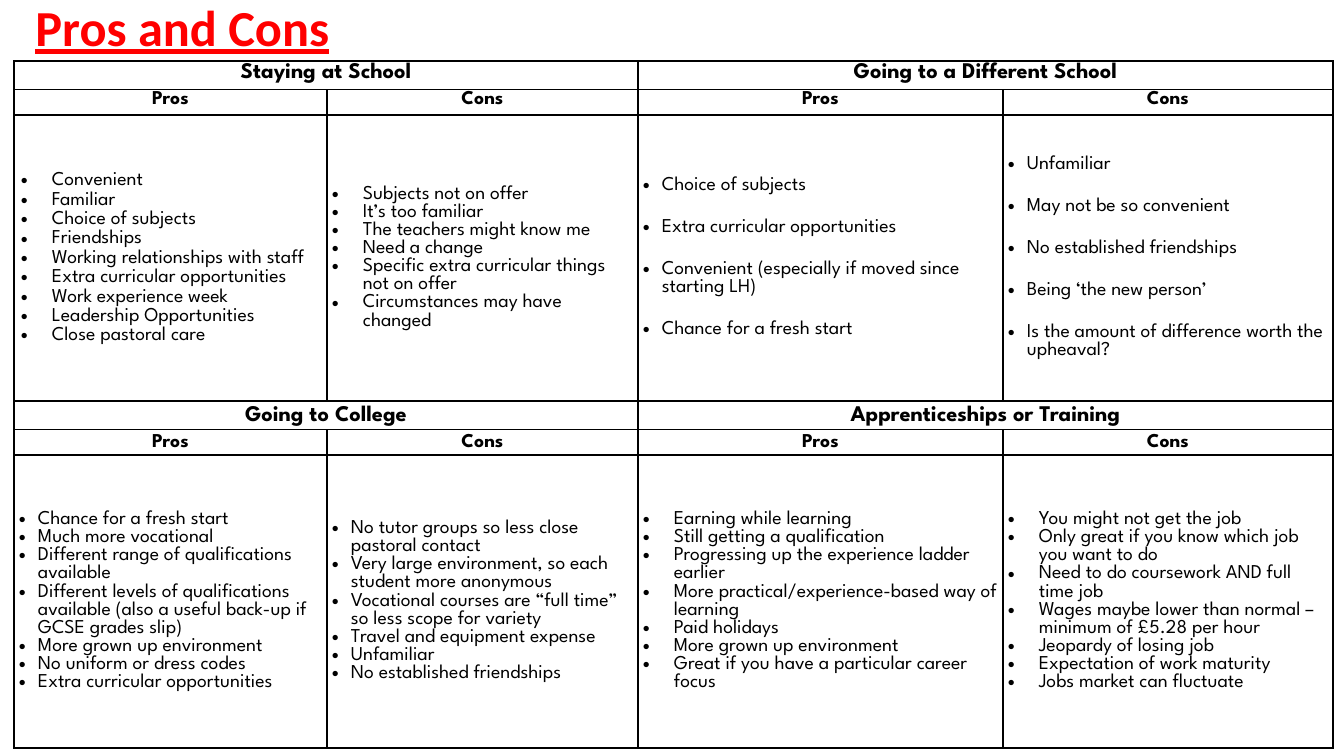
"""Build the Pros and Cons slide comparing four routes after school."""
from lxml import etree
from pptx import Presentation
from pptx import util as u
from pptx.dml import color
from pptx.enum import text
from pptx.oxml import ns

EMU_PER_PX = 914400 / 100.8
FONT = "League Spartan"
COLUMN_WIDTHS = [313, 311, 365, 330]
ROW_HEIGHTS = [28, 25, 286, 28, 25, 293]
ROUTES_PER_ROW = 2
ROWS_PER_ROUTE = 3
HEADING = dict(bold=True, align=text.PP_ALIGN.CENTER, spacing=1.07, before=6, after=6)
WIDE = dict(indent=31, hang=31)
NARROW = dict(indent=19, hang=19)
SPACED = dict(NARROW, gap=17)

ROUTES = [
    ("Staying at School",
     (["Convenient", "Familiar", "Choice of subjects", "Friendships",
       "Working relationships with staff", "Extra curricular opportunities",
       "Work experience week", "Leadership Opportunities", "Close pastoral care"],
      dict(indent=33, hang=31, spacing=1.07, tail=8)),
     (["Subjects not on offer", "It’s too familiar", "The teachers might know me",
       "Need a change", "Specific extra curricular things not on offer",
       "Circumstances may have changed"], WIDE)),
    ("Going to a Different School",
     (["Choice of subjects", "Extra curricular opportunities",
       "Convenient (especially if moved since starting LH)",
       "Chance for a fresh start"], SPACED),
     (["Unfamiliar", "May not be so convenient", "No established friendships",
       "Being ‘the new person’",
       "Is the amount of difference worth the upheaval?"], SPACED)),
    ("Going to College",
     (["Chance for a fresh start", "Much more vocational",
       "Different range of qualifications available",
       "Different levels of qualifications available "
       "(also a useful back-up if GCSE grades slip)",
       "More grown up environment", "No uniform or dress codes",
       "Extra curricular opportunities"], NARROW),
     (["No tutor groups so less close pastoral contact",
       "Very large environment, so each student more anonymous",
       "Vocational courses are “full time” so less scope for variety",
       "Travel and equipment expense", "Unfamiliar",
       "No established friendships"], NARROW)),
    ("Apprenticeships or Training",
     (["Earning while learning", "Still getting a qualification",
       "Progressing up the experience ladder earlier",
       "More practical/experience-based way of learning", "Paid holidays",
       "More grown up environment",
       "Great if you have a particular career focus"], WIDE),
     (["You might not get the job",
       "Only great if you know which job you want to do",
       "Need to do coursework AND full time job",
       "Wages maybe lower than normal – minimum of £5.28 per hour",
       "Jeopardy of losing job", "Expectation of work maturity",
       "Jobs market can fluctuate"], WIDE)),
]


def px(length):
    """Turn whole pixels into EMU."""
    return u.Emu(round(length * EMU_PER_PX))


def rgb(hex_value):
    """Turn a hex string into a colour."""
    return color.RGBColor.from_string(hex_value)


def write(paragraph, words, size=14, font=FONT, ink="000000", bold=False,
          underline=False, align=text.PP_ALIGN.LEFT, spacing=1.0, before=0, after=0):
    """Put formatted words into a paragraph."""
    paragraph.alignment = align
    paragraph.line_spacing = spacing
    paragraph.space_before = u.Pt(before)
    paragraph.space_after = u.Pt(after)
    run = paragraph.add_run()
    run.text = words
    run.font.size = u.Pt(size)
    run.font.name = font
    run.font.bold = bold
    run.font.underline = underline
    run.font.color.rgb = rgb(ink)


def add_bullet(paragraph, indent, hang):
    """Give a paragraph a round bullet with a hanging indent."""
    properties = paragraph._p.get_or_add_pPr()
    properties.set("marL", str(px(indent)))
    properties.set("indent", str(-px(hang)))
    etree.SubElement(properties, ns.qn("a:buFont"), typeface="Arial")
    etree.SubElement(properties, ns.qn("a:buChar"), char="•")


def write_points(cell, points, indent, hang, spacing=1.0, gap=0, tail=0):
    """Fill a cell with bulleted points."""
    frame = cell.text_frame
    for number, point in enumerate(points):
        paragraph = frame.add_paragraph() if number else frame.paragraphs[0]
        last = number == len(points) - 1
        write(paragraph, point, spacing=spacing, before=gap if number else 0,
              after=tail if last else 0)
        add_bullet(paragraph, indent, hang)


def add_border(cell, side, width):
    """Draw one black border of a cell."""
    properties = cell._tc.get_or_add_tcPr()
    line = etree.SubElement(properties, ns.qn(f"a:ln{side}"), w=str(u.Pt(width)))
    fill = etree.SubElement(line, ns.qn("a:solidFill"))
    etree.SubElement(fill, ns.qn("a:srgbClr"), val="000000")


def format_cell(cell, row, column):
    """Set the insets, anchor, borders and fill of a cell."""
    cell.margin_left = cell.margin_right = px(5)
    cell.margin_top = cell.margin_bottom = 0
    cell.vertical_anchor = text.MSO_ANCHOR.TOP if row < 2 else text.MSO_ANCHOR.MIDDLE
    merged = row % ROWS_PER_ROUTE == 0
    heavy = {
        "L": merged or column % 2 == 0,
        "R": merged or column % 2 == 1,
        "T": row == 0,
        "B": row == len(ROW_HEIGHTS) - 1,
    }
    for side, is_heavy in heavy.items():
        add_border(cell, side, 1.5 if is_heavy else 1)
    cell.fill.background()


def add_title(slide):
    """Place the underlined red title."""
    title = slide.shapes.title
    title.left, title.top, title.width, title.height = map(px, (-82, -10, 529, 72))
    write(title.text_frame.paragraphs[0], "Pros and Cons", size=36, font="Calibri",
          ink="FF0000", bold=True, underline=True, align=text.PP_ALIGN.CENTER)
    title.text_frame.auto_size = text.MSO_AUTO_SIZE.SHAPE_TO_FIT_TEXT


def add_grid(slide):
    """Add the bordered table without its banded style."""
    grid = slide.shapes.add_table(
        len(ROW_HEIGHTS), len(COLUMN_WIDTHS), px(14), px(61),
        px(sum(COLUMN_WIDTHS)), px(sum(ROW_HEIGHTS))).table
    grid.first_row = grid.horz_banding = False
    for column, width in enumerate(COLUMN_WIDTHS):
        grid.columns[column].width = px(width)
    for row, height in enumerate(ROW_HEIGHTS):
        grid.rows[row].height = px(height)
        for column in range(len(COLUMN_WIDTHS)):
            format_cell(grid.cell(row, column), row, column)
    return grid


def fill_route(grid, number, name, pros, cons):
    """Write one route's heading with its pros and cons."""
    row = number // ROUTES_PER_ROW * ROWS_PER_ROUTE
    column = number % ROUTES_PER_ROW * 2
    heading = grid.cell(row, column)
    heading.merge(grid.cell(row, column + 1))
    write(heading.text_frame.paragraphs[0], name, size=16, **HEADING)
    for offset, (label, (points, style)) in enumerate([("Pros", pros), ("Cons", cons)]):
        label_cell = grid.cell(row + 1, column + offset)
        write(label_cell.text_frame.paragraphs[0], label, **HEADING)
        write_points(grid.cell(row + 2, column + offset), points, **style)


def main():
    """Build and save the slide."""
    deck = Presentation()
    deck.slide_width, deck.slide_height = px(1344), px(756)
    slide = deck.slides.add_slide(deck.slide_layouts[5])
    add_title(slide)
    grid = add_grid(slide)
    for number, (name, pros, cons) in enumerate(ROUTES):
        fill_route(grid, number, name, pros, cons)
    deck.save("out.pptx")


if __name__ == "__main__":
    main()
